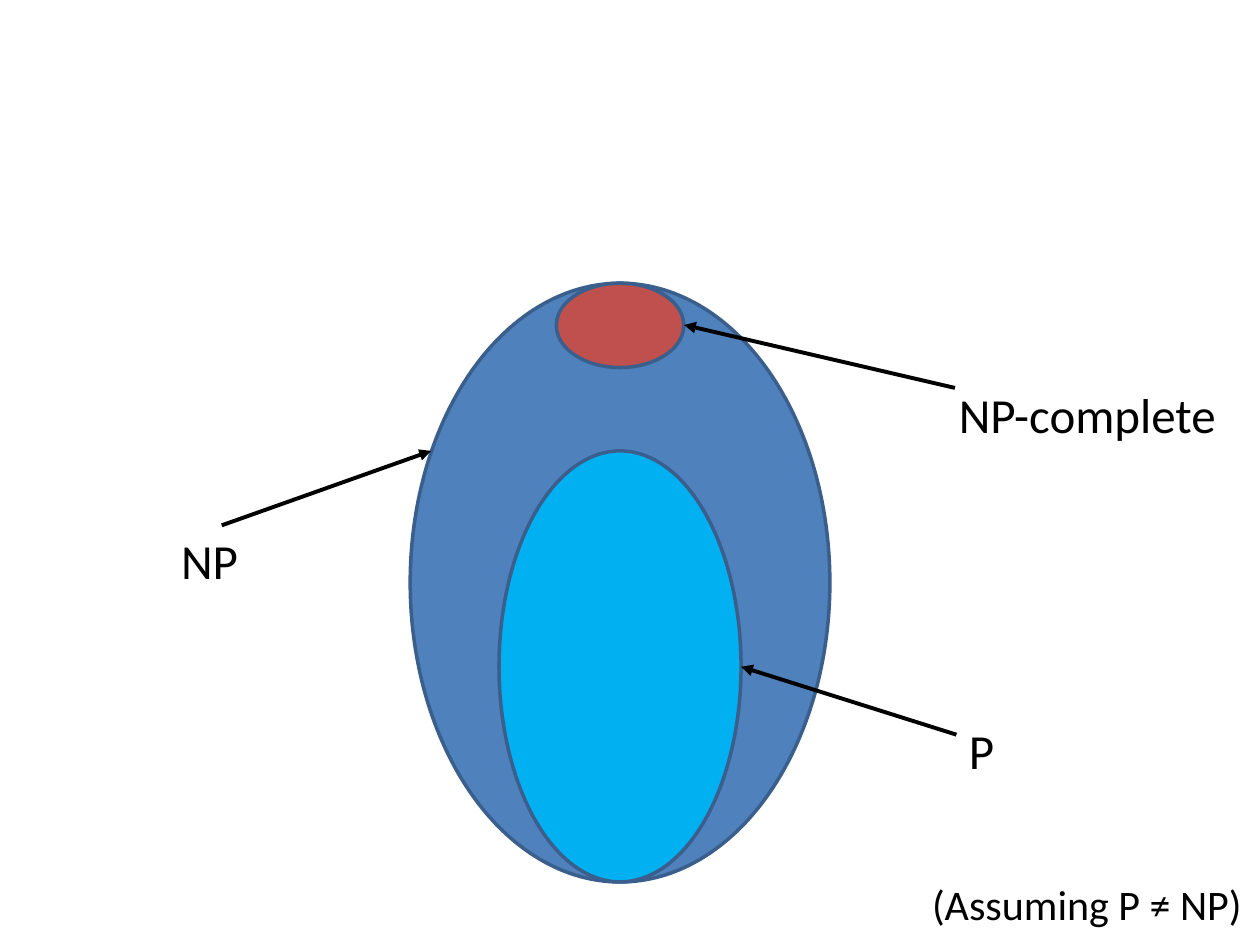
from typing import NamedTuple

from lxml import etree
from pptx import Presentation
from pptx.dml.color import RGBColor
from pptx.enum.shapes import MSO_CONNECTOR, MSO_SHAPE
from pptx.enum.text import MSO_AUTO_SIZE
from pptx.oxml.ns import qn
from pptx.slide import Slide
from pptx.util import Cm, Pt

ELLIPSE = MSO_SHAPE.OVAL
STRAIGHT = MSO_CONNECTOR.STRAIGHT
FIT_TEXT = MSO_AUTO_SIZE.SHAPE_TO_FIT_TEXT

BLUE = RGBColor(0x4F, 0x81, 0xBD)
SKY = RGBColor(0x00, 0xB0, 0xF0)
RED = RGBColor(0xC0, 0x50, 0x4D)
OUTLINE = RGBColor(0x3A, 0x5F, 0x8C)
BLACK = RGBColor(0x00, 0x00, 0x00)

FONT = "Calibri"
BLANK_LAYOUT = 6

# All lengths are centimetres.
CENTER_X = 12.5
NP_TOP = 5.71
NP_BOTTOM = 17.78
P_HEIGHT = 8.69


class ComplexityClass(NamedTuple):
    top: float
    width: float
    height: float
    fill: RGBColor


class Arrow(NamedTuple):
    start: tuple[float, float]
    tip: tuple[float, float]


class Label(NamedTuple):
    text: str
    left: float
    top: float
    width: float
    height: float = 1.45
    size: int = 28


CLASSES = [
    ComplexityClass(NP_TOP, 8.46, NP_BOTTOM - NP_TOP, BLUE),
    ComplexityClass(NP_BOTTOM - P_HEIGHT, 4.88, P_HEIGHT, SKY),
    ComplexityClass(NP_TOP, 2.57, 1.7, RED),
]

ARROWS = [
    Arrow((4.47, 10.59), (8.69, 9.09)),
    Arrow((19.28, 14.81), (14.94, 13.44)),
    Arrow((19.25, 7.82), (13.79, 6.55)),
]

LABELS = [
    Label("NP", 3.4, 10.57, 1.68),
    Label("P", 19.28, 14.4, 1.04),
    Label("NP-complete", 19.08, 7.62, 5.79),
    Label("(Assuming P ≠ NP)", 18.54, 17.58, 6.83, height=1.27, size=24),
]


def draw_class(page: Slide, item: ComplexityClass) -> None:
    """Draw one complexity class as an ellipse on the shared vertical axis."""
    ellipse = page.shapes.add_shape(
        ELLIPSE, Cm(CENTER_X - item.width / 2), Cm(item.top),
        Cm(item.width), Cm(item.height))
    ellipse.shadow.inherit = False
    ellipse.fill.solid()
    ellipse.fill.fore_color.rgb = item.fill
    ellipse.line.color.rgb = OUTLINE
    ellipse.line.width = Pt(2)


def draw_arrow(page: Slide, arrow: Arrow) -> None:
    connector = page.shapes.add_connector(
        STRAIGHT, *map(Cm, arrow.start), *map(Cm, arrow.tip))
    connector.line.color.rgb = BLACK
    connector.line.width = Pt(2.25)
    etree.SubElement(connector.line._get_or_add_ln(), qn("a:tailEnd"), type="triangle")
    etree.SubElement(connector._element.spPr, qn("a:effectLst"))


def write_text(page: Slide, text: str, *, left: float, top: float,
               width: float, height: float, size: int) -> None:
    box = page.shapes.add_textbox(Cm(left), Cm(top), Cm(width), Cm(height))
    box.text_frame.word_wrap = False
    box.text_frame.auto_size = FIT_TEXT
    span = box.text_frame.paragraphs[0].add_run()
    span.text = text
    span.font.name = FONT
    span.font.size = Pt(size)
    span.font.color.rgb = BLACK


def main() -> None:
    deck = Presentation()
    deck.slide_width = Cm(25.4)
    deck.slide_height = Cm(19.05)
    page = deck.slides.add_slide(deck.slide_layouts[BLANK_LAYOUT])

    for item in CLASSES:
        draw_class(page, item)
    for arrow in ARROWS:
        draw_arrow(page, arrow)
    for label in LABELS:
        write_text(page, **label._asdict())

    deck.save("out.pptx")


if __name__ == "__main__":
    main()
